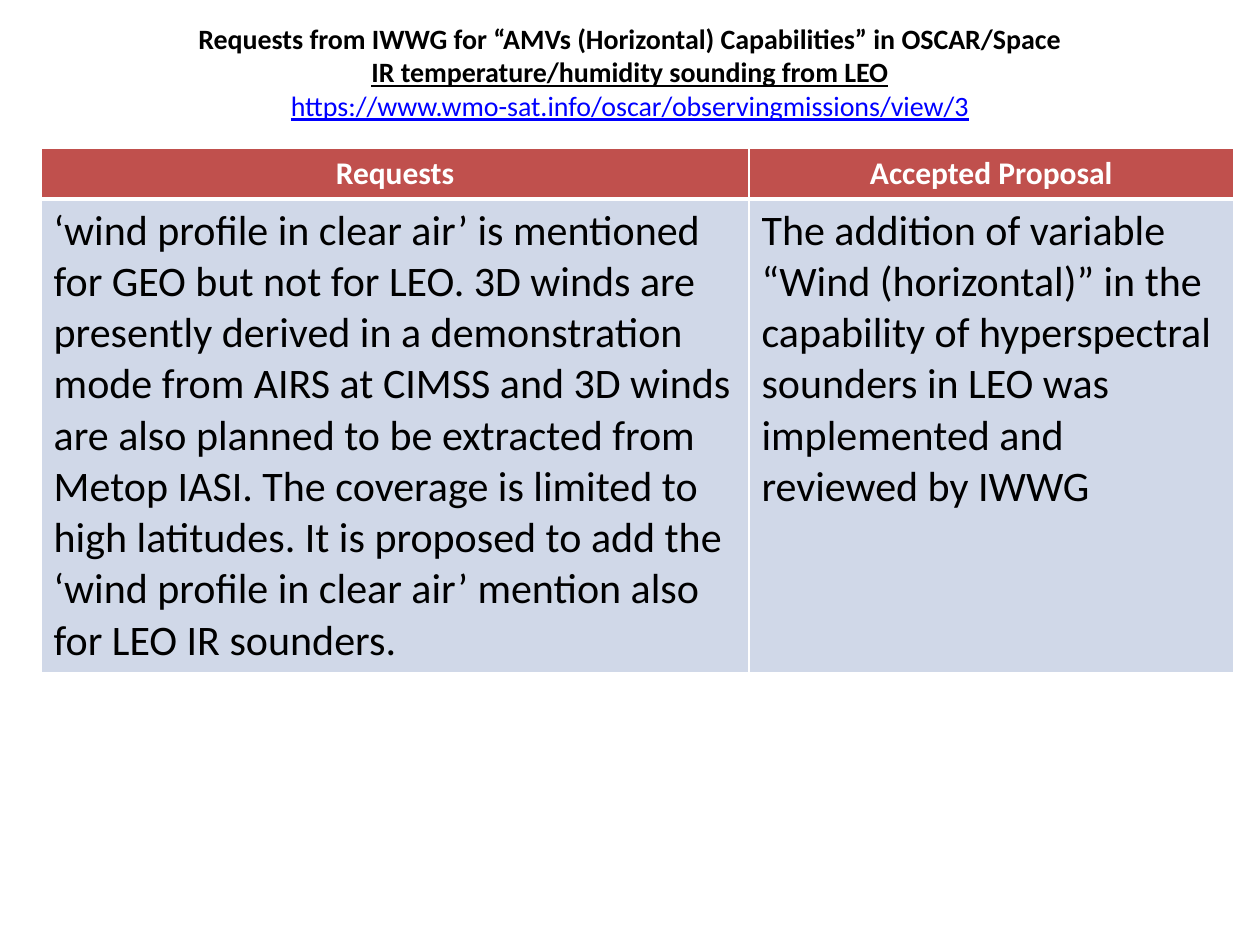
from copy import deepcopy
from dataclasses import dataclass

from lxml.etree import SubElement
from pptx import Presentation
from pptx.dml.color import RGBColor
from pptx.enum.text import MSO_ANCHOR, MSO_AUTO_SIZE, PP_ALIGN
from pptx.oxml.ns import qn
from pptx.util import Pt

FONT = "Calibri"
WHITE, BLACK, BLUE = "FFFFFF", "000000", "0000FF"
HEADER_RED, BODY_BLUE = "C0504D", "D0D8E8"


@dataclass
class TextStyle:
    size: float
    color: str = BLACK
    bold: bool = False
    underline: bool = False


@dataclass
class RowStyle:
    text: TextStyle
    fill: str
    alignment: PP_ALIGN
    bottom_border: float


def rgb(color: str) -> RGBColor:
    return RGBColor.from_string(color)


def add_run(paragraph, text: str, style: TextStyle):
    run = paragraph.add_run()
    run.text = text
    font = run.font
    font.name, font.size = FONT, Pt(style.size)
    font.bold, font.underline = style.bold, style.underline
    font.color.rgb = rgb(style.color)
    return run


def add_border(cell, side: str, width: float) -> None:
    line = SubElement(cell._tc.get_or_add_tcPr(), qn(f"a:{side}"), w=str(Pt(width)))
    SubElement(SubElement(line, qn("a:solidFill")), qn("a:srgbClr"), val=WHITE)


def fill_cell(cell, text: str, style: RowStyle) -> None:
    for side in ("lnL", "lnR", "lnT"):
        add_border(cell, side, 1)
    add_border(cell, "lnB", style.bottom_border)
    cell.fill.solid()
    cell.fill.fore_color.rgb = rgb(style.fill)
    paragraph = cell.text_frame.paragraphs[0]
    paragraph.alignment = style.alignment
    add_run(paragraph, text, style.text)


presentation = Presentation()
presentation.slide_width, presentation.slide_height = Pt(720), Pt(540)
slide = presentation.slides.add_slide(presentation.slide_layouts[5])

# Title: three lines in one paragraph
TITLE_LINES = [
    ("Requests from IWWG for “AMVs (Horizontal) Capabilities” in OSCAR/Space",
     TextStyle(16, bold=True)),
    ("IR temperature/humidity sounding from LEO",
     TextStyle(16, bold=True, underline=True)),
    ("https://www.wmo-sat.info/oscar/observingmissions/view/3",
     TextStyle(16, BLUE, underline=True)),
]
title = slide.shapes.title
title.left, title.top, title.width, title.height = Pt(36), Pt(1.5), Pt(648), Pt(79)
title.text_frame.word_wrap = True
title.text_frame.auto_size = MSO_AUTO_SIZE.NONE
title.text_frame.vertical_anchor = MSO_ANCHOR.MIDDLE
title_paragraph = title.text_frame.paragraphs[0]
title_paragraph.alignment = PP_ALIGN.CENTER
for index, (text, style) in enumerate(TITLE_LINES):
    if index:
        # The break takes the size of the line it ends
        title_paragraph.add_line_break()
        title_paragraph._p[-1].append(deepcopy(run._r.rPr))
    run = add_run(title_paragraph, text, style)

# Table: requests and the accepted proposal
HEADER = RowStyle(TextStyle(18, WHITE, bold=True), HEADER_RED, PP_ALIGN.CENTER, 3)
BODY = RowStyle(TextStyle(24), BODY_BLUE, PP_ALIGN.LEFT, 1)
ROWS = [
    (HEADER, 24, ("Requests", "Accepted Proposal")),
    (BODY, 254, (
        "‘wind profile in clear air’ is mentioned for GEO but not for LEO. "
        "3D winds are presently derived in a demonstration mode from AIRS at "
        "CIMSS and 3D winds are also planned to be extracted from Metop IASI. "
        "The coverage is limited to high latitudes. It is proposed to add the "
        "‘wind profile in clear air’ mention also for LEO IR sounders.",
        "The addition of variable “Wind (horizontal)” in the capability of "
        "hyperspectral sounders in LEO was implemented and reviewed by IWWG")),
]
COLUMN_WIDTHS = (404.5, 277)
table = slide.shapes.add_table(
    len(ROWS), len(COLUMN_WIDTHS), Pt(23.5), Pt(84.5),
    Pt(sum(COLUMN_WIDTHS)), Pt(sum(height for _, height, _ in ROWS))).table
for column, width in zip(table.columns, COLUMN_WIDTHS):
    column.width = Pt(width)
for row, (style, height, texts) in zip(table.rows, ROWS):
    row.height = Pt(height)
    for cell, text in zip(row.cells, texts):
        fill_cell(cell, text, style)

presentation.save("out.pptx")
